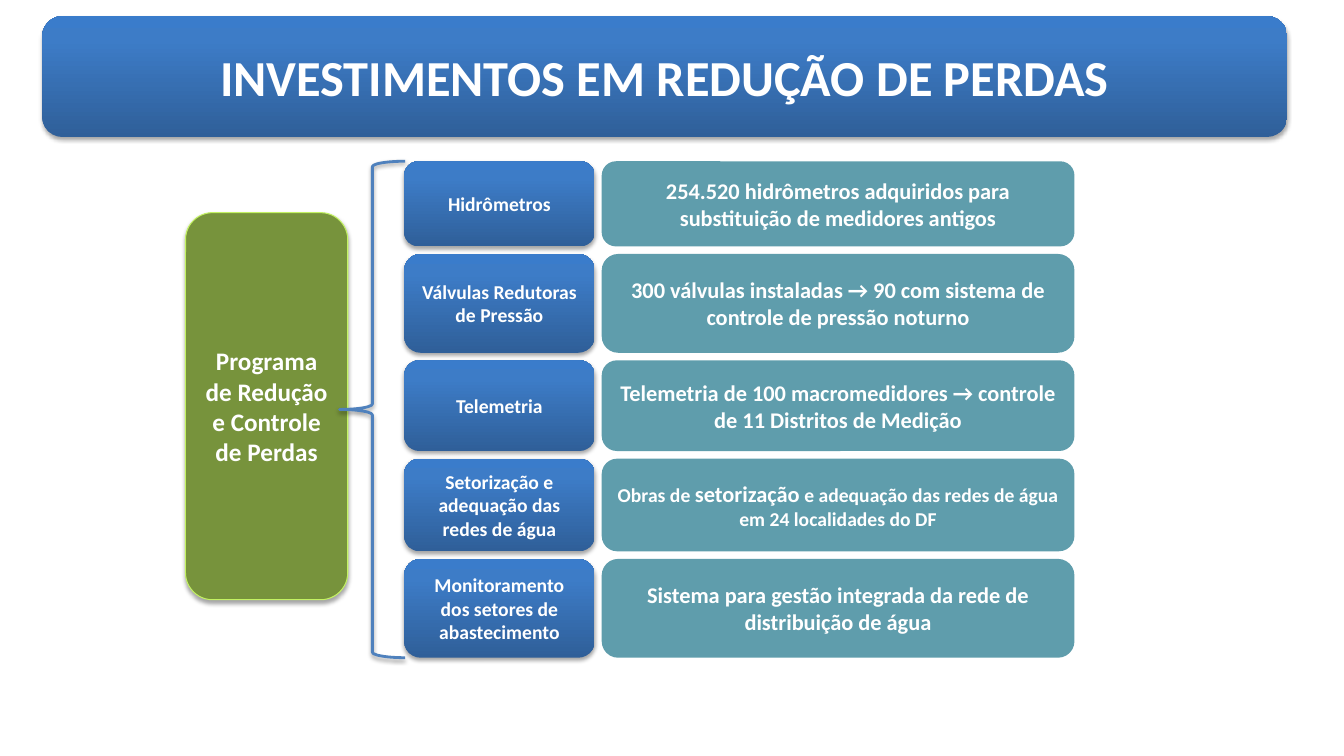
from copy import deepcopy
from dataclasses import dataclass

from lxml.etree import SubElement
from pptx import Presentation
from pptx.dml.color import RGBColor
from pptx.enum.shapes import MSO_SHAPE
from pptx.enum.text import MSO_ANCHOR, PP_ALIGN
from pptx.oxml.ns import qn
from pptx.shapes.autoshape import Shape
from pptx.util import Pt

FONT = "Calibri"
WHITE = "FFFFFF"
TEAL = "5F9DAC"
GREEN = "77933C"
LIME = "C3F263"
BRACE_BLUE = "4F81BD"
BLUE_STOPS = ((0, "2F5F99"), (0.8, "3D7CC7"), (1, "3A7CCB"))

ROWS_TOP = 115.2
ROW_GAP = 5.4
ACTION_LEFT, ACTION_WIDTH = 288.7, 136.1
RESULT_LEFT, RESULT_WIDTH = 429.8, 337.7


@dataclass
class Span:
    text: str
    size: float = 16


@dataclass
class Row:
    height: float
    action: str
    result: list[Span]


ROWS = [
    Row(60.8, "Hidrômetros",
        [Span("254.520 hidrômetros adquiridos para substituição de medidores antigos")]),
    Row(70.6, "Válvulas Redutoras de Pressão",
        [Span("300 válvulas instaladas → 90 com sistema de controle de pressão noturno")]),
    Row(64.8, "Telemetria",
        [Span("Telemetria de 100 macromedidores → controle de 11 Distritos de Medição")]),
    Row(66.2, "Setorização e adequação das redes de água",
        [Span("Obras de ", 14), Span("setorização"),
         Span(" e adequação das redes de água em 24 localidades do DF", 14)]),
    Row(70.6, "Monitoramento dos setores de abastecimento",
        [Span("Sistema para gestão integrada da rede de distribuição de água")]),
]


def rgb(value: str) -> RGBColor:
    return RGBColor.from_string(value)


def add_outline(slide, kind: MSO_SHAPE, left: float, top: float, width: float,
                height: float, line: str | None = None, weight: float = 0.75) -> Shape:
    shape = slide.shapes.add_shape(kind, Pt(left), Pt(top), Pt(width), Pt(height))
    shape.shadow.inherit = False
    if line:
        shape.line.color.rgb = rgb(line)
        shape.line.width = Pt(weight)
    else:
        shape.line.fill.background()
    return shape


def fill_blue_gradient(shape: Shape) -> None:
    shape.fill.gradient()
    shape.fill.gradient_angle = 90
    stop_list = shape._element.spPr.find(".//" + qn("a:gsLst"))
    stop_list.append(deepcopy(stop_list[-1]))
    for stop, (position, color) in zip(shape.fill.gradient_stops, BLUE_STOPS):
        stop.position = position
        stop.color.rgb = rgb(color)


def add_shadow(shape: Shape, opacity: int = 35, distance: float = 1.8) -> None:
    effects = shape._element.spPr.find(qn("a:effectLst"))
    shadow = SubElement(effects, qn("a:outerShdw"), blurRad=str(Pt(3.1)),
                        dist=str(Pt(distance)), dir="5400000", rotWithShape="0")
    black = SubElement(shadow, qn("a:srgbClr"), val="000000")
    SubElement(black, qn("a:alpha"), val=str(opacity * 1000))


def write_text(shape: Shape, spans: list[Span], *, color: str = WHITE,
               bold: bool = True, align: PP_ALIGN = PP_ALIGN.CENTER) -> None:
    frame = shape.text_frame
    frame.word_wrap = True
    frame.vertical_anchor = MSO_ANCHOR.MIDDLE
    paragraph = frame.paragraphs[0]
    paragraph.alignment = align
    for span in spans:
        run = paragraph.add_run()
        run.text = span.text
        run.font.name = FONT
        run.font.size = Pt(span.size)
        run.font.bold = bold
        run.font.color.rgb = rgb(color)


def add_box(slide, left: float, top: float, width: float, height: float,
            spans: list[Span], fill: str | None = None, line: str | None = None,
            shadow: bool = True) -> None:
    """Rounded box; without a fill colour it takes the blue gradient."""
    box = add_outline(slide, MSO_SHAPE.ROUNDED_RECTANGLE, left, top, width, height, line)
    if fill:
        box.fill.solid()
        box.fill.fore_color.rgb = rgb(fill)
    else:
        fill_blue_gradient(box)
    if shadow:
        add_shadow(box)
    write_text(box, spans)


def main() -> None:
    deck = Presentation()
    deck.slide_width, deck.slide_height = Pt(960), Pt(540)
    slide = deck.slides.add_slide(deck.slide_layouts[6])

    # Title banner
    add_box(slide, 30.2, 11.5, 889.2, 86.4,
            [Span("INVESTIMENTOS EM REDUÇÃO DE PERDAS", 36)])

    # Actions with their results
    top = ROWS_TOP
    for row in ROWS:
        add_box(slide, ACTION_LEFT, top, ACTION_WIDTH, row.height, [Span(row.action, 14)])
        add_box(slide, RESULT_LEFT, top, RESULT_WIDTH, row.height, row.result,
                fill=TEAL, shadow=False)
        top += row.height + ROW_GAP

    # Programme and the brace that opens it into actions
    add_box(slide, 132.5, 151.9, 115.9, 276.5,
            [Span("Programa de Redução e Controle de Perdas", 18)], fill=GREEN, line=LIME)
    brace = add_outline(slide, MSO_SHAPE.LEFT_BRACE, 242.6, ROWS_TOP, 46.8,
                        top - ROW_GAP - ROWS_TOP, line=BRACE_BLUE, weight=2)
    brace.fill.background()
    add_shadow(brace, opacity=38, distance=1.6)

    deck.save("out.pptx")


if __name__ == "__main__":
    main()
